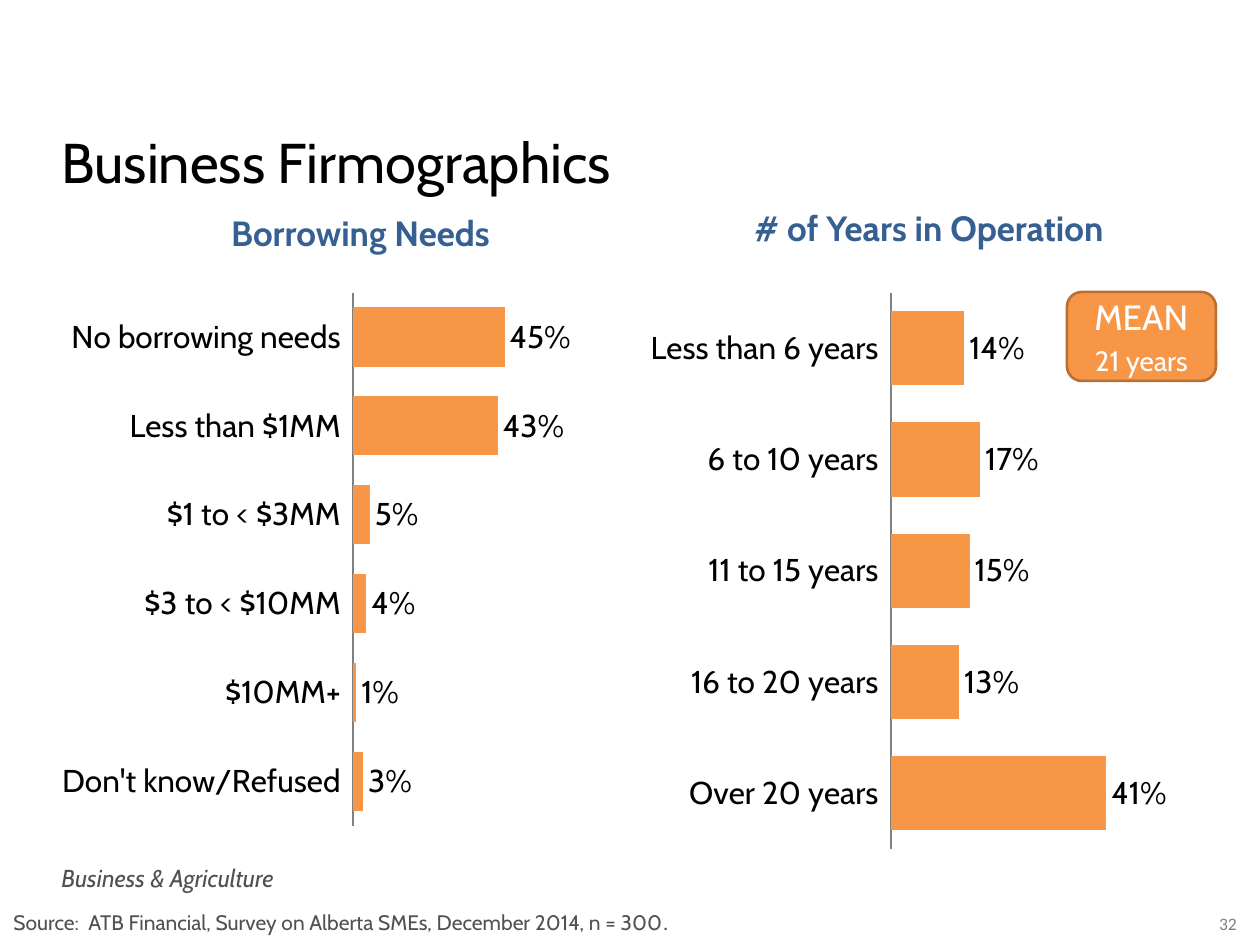
from dataclasses import dataclass

from lxml import etree
from pptx import Presentation
from pptx.chart.data import CategoryChartData
from pptx.dml.color import RGBColor
from pptx.enum.chart import XL_CHART_TYPE, XL_LABEL_POSITION, XL_TICK_LABEL_POSITION, XL_TICK_MARK
from pptx.enum.shapes import MSO_SHAPE
from pptx.enum.text import MSO_ANCHOR, PP_ALIGN
from pptx.oxml.ns import qn
from pptx.util import Emu, Pt

BAR = XL_CHART_TYPE.BAR_CLUSTERED
OUTSIDE_END = XL_LABEL_POSITION.OUTSIDE_END
LABELS_LOW = XL_TICK_LABEL_POSITION.LOW
NO_TICK = XL_TICK_MARK.NONE
ROUNDED = MSO_SHAPE.ROUNDED_RECTANGLE
TOP, MIDDLE = MSO_ANCHOR.TOP, MSO_ANCHOR.MIDDLE
LEFT, CENTER = PP_ALIGN.LEFT, PP_ALIGN.CENTER
PX = 914400 / 126


@dataclass(frozen=True)
class Theme:
    font: str = "Cabin"
    number_font: str = "Calibri"
    black: str = "000000"
    white: str = "FFFFFF"
    heading: str = "376092"
    muted: str = "505150"
    gray: str = "808080"
    accent: str = "F79646"
    accent_edge: str = "B76F34"
    title_size: int = 32
    heading_size: int = 20
    chart_size: int = 18
    mean_size: int = 16
    footer_size: int = 14
    source_size: int = 12
    number_size: int = 10


THEME = Theme()


def px(value):
    return Emu(round(value * PX))


def frame(*lengths):
    return [px(length) for length in lengths]


def style(font, size, color, name=THEME.font, bold=False, italic=False):
    font.name, font.size = name, Pt(size)
    font.bold, font.italic = bold, italic
    font.color.rgb = RGBColor.from_string(color)


def add_text(page, place, text, size, color, align=LEFT, **look):
    box = page.shapes.add_textbox(*frame(*place))
    box.text_frame.word_wrap = True
    box.text_frame.vertical_anchor = TOP
    para = box.text_frame.paragraphs[0]
    para.text, para.alignment = text, align
    style(para.font, size, color, **look)
    return para


def set_plot_area(chart, left, width, height):
    """Fix the inner plot area, as fractions of the chart, from its top edge."""
    plot_area = chart._chartSpace.chart.plotArea
    layout = plot_area.find(qn("c:layout"))
    if layout is None:
        layout = etree.Element(qn("c:layout"))
        plot_area.insert(0, layout)
    manual = etree.SubElement(layout, qn("c:manualLayout"))
    settings = [("layoutTarget", "inner"), ("xMode", "edge"), ("yMode", "edge"),
                ("x", left), ("y", 0), ("w", width), ("h", height)]
    for tag, value in settings:
        etree.SubElement(manual, qn(f"c:{tag}")).set("val", str(value))


def add_bars(page, place, plot_left, shares):
    data = CategoryChartData(number_format="0%")
    data.categories = list(shares)
    data.add_series("Series 1", list(shares.values()))
    chart = page.shapes.add_chart(BAR, *frame(*place), data).chart
    chart.has_legend = chart.has_title = False
    style(chart.font, THEME.chart_size, THEME.black)
    set_plot_area(chart, plot_left, round(1 - plot_left, 2), 0.96)

    # Axes
    category = chart.category_axis
    category.reverse_order = True
    category.major_tick_mark = category.minor_tick_mark = NO_TICK
    category.tick_label_position = LABELS_LOW
    category.format.line.color.rgb = RGBColor.from_string(THEME.gray)
    value = chart.value_axis
    value.minimum_scale, value.maximum_scale = 0, 0.7
    value.has_major_gridlines = value.visible = False

    # Bars and their labels
    plot = chart.plots[0]
    plot.gap_width, plot.vary_by_categories = 50, False
    fill = plot.series[0].format.fill
    fill.solid()
    fill.fore_color.rgb = RGBColor.from_string(THEME.accent)
    plot.has_data_labels = True
    labels = plot.data_labels
    labels.show_value, labels.position = True, OUTSIDE_END
    labels.number_format, labels.number_format_is_linked = "0%", False
    style(labels.font, THEME.chart_size, THEME.black)


def add_badge(page, place, lines):
    badge = page.shapes.add_shape(ROUNDED, *frame(*place))
    badge.shadow.inherit = False
    badge.fill.solid()
    badge.fill.fore_color.rgb = RGBColor.from_string(THEME.accent)
    badge.line.color.rgb = RGBColor.from_string(THEME.accent_edge)
    badge.line.width = Pt(1.5)
    body = badge.text_frame
    body.word_wrap, body.vertical_anchor = True, MIDDLE
    for index, (text, size) in enumerate(lines):
        para = body.add_paragraph() if index else body.paragraphs[0]
        para.text, para.alignment = text, CENTER
        if index:
            para.space_before = Pt(0.2 * size)
        style(para.font, size, THEME.white)


def main():
    deck = Presentation()
    deck.slide_width, deck.slide_height = px(1260), px(945)
    page = deck.slides.add_slide(deck.slide_layouts[6])

    # Title and footer
    add_text(page, (49, 121, 1162, 100), "Business Firmographics",
             THEME.title_size, THEME.black)
    add_text(page, (49, 857, 354, 43), "Business & Agriculture",
             THEME.footer_size, THEME.muted, italic=True)
    add_text(page, (1197, 907, 62, 34), "32", THEME.number_size, THEME.gray,
             CENTER, name=THEME.number_font)

    # Charts
    add_bars(page, (523, 292, 736, 580), 0.5, {
        "Less than 6 years": 0.14, "6 to 10 years": 0.17, "11 to 15 years": 0.15,
        "16 to 20 years": 0.13, "Over 20 years": 0.41})
    add_bars(page, (53, 292, 536, 556), 0.56, {
        "No borrowing needs": 0.45, "Less than $1MM": 0.43, "$1 to < $3MM": 0.05,
        "$3 to < $10MM": 0.04, "$10MM+": 0.01, "Don't know/Refused": 0.03})

    # Chart headings
    for place, text in [((199, 205, 323, 55), "Borrowing Needs"),
                        ((703, 200, 452, 55), "# of Years in Operation")]:
        add_text(page, place, text, THEME.heading_size, THEME.heading, CENTER, bold=True)

    # Mean badge
    add_badge(page, (1067, 292, 149, 89),
              [("MEAN", THEME.heading_size), ("21 years", THEME.mean_size)])

    # Source line, closed by a full stop in the number font
    source = add_text(page, (1, 903, 1173, 38),
                      "Source:  ATB Financial, Survey on Alberta SMEs, December 2014, n = 300",
                      THEME.source_size, THEME.muted)
    stop = source.add_run()
    stop.text = "."
    stop.font.name = THEME.number_font

    deck.save("out.pptx")


if __name__ == "__main__":
    main()
